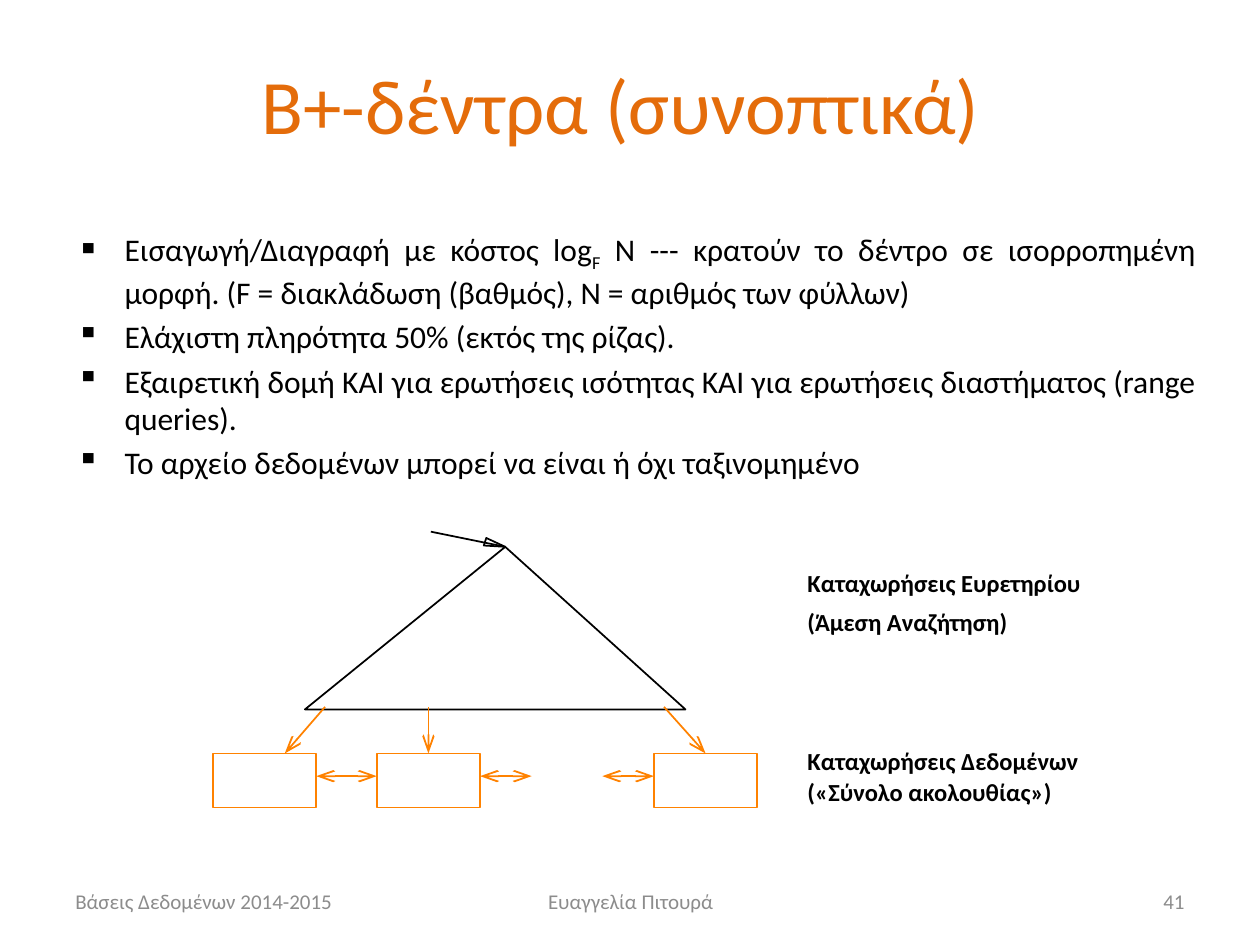
from dataclasses import dataclass

from lxml import etree
from pptx import Presentation
from pptx import util as u
from pptx.dml.color import RGBColor
from pptx.enum import shapes, text
from pptx.oxml import ns

WIDTH, HEIGHT = u.Inches(10), u.Inches(7.5)
COLUMNS, ROWS = 100, 75


@dataclass(frozen=True)
class Theme:
    font: str = "Calibri"
    ink: str = "000000"
    heading: str = "E46C0A"
    data: str = "FF8200"
    muted: str = "8C8C8C"
    title_size: int = 44
    body_size: int = 18
    label_size: int = 14
    footer_size: int = 12
    stroke: int = 1


THEME = Theme()
ALIGN = text.PP_ALIGN
ANCHOR = text.MSO_ANCHOR

BULLETS = [
    [("Εισαγωγή/Διαγραφή με κόστος log", 0), ("F", -25000),
     (" N --- κρατούν το δέντρο σε ισορροπημένη μορφή. "
      "(F = διακλάδωση (βαθμός), N = αριθμός των φύλλων)", 0)],
    [("Ελάχιστη πληρότητα 50% (εκτός της ρίζας).", 0)],
    [("Εξαιρετική δομή ΚΑΙ για ερωτήσεις ισότητας ΚΑΙ για ερωτήσεις "
      "διαστήματος (range queries).", 0)],
    [("Το αρχείο δεδομένων μπορεί να είναι ή όχι ταξινομημένο", 0)],
]
LABELS = [
    ("Καταχωρήσεις Ευρετηρίου", 44.6),
    ("(Άμεση Αναζήτηση)", 47.7),
    ("Καταχωρήσεις Δεδομένων", 58.7),
    ("(«Σύνολο ακολουθίας»)", 61.2),
]
FOOTERS = [
    ("Βάσεις Δεδομένων 2014-2015", 5, 23.3, ALIGN.LEFT),
    ("Ευαγγελία Πιτουρά", 34.2, 31.7, ALIGN.CENTER),
    ("41", 71.7, 23.3, ALIGN.RIGHT),
]


def col(count):
    return round(WIDTH * count / COLUMNS)


def row(count):
    return round(HEIGHT * count / ROWS)


def place(left, top, width, height):
    return col(left), row(top), col(width), row(height)


def apply(target, formats):
    for name, value in formats.items():
        setattr(target, name, value)


def add_frame(slide, area, **formats):
    frame = slide.shapes.add_textbox(*place(*area)).text_frame
    apply(frame, {"word_wrap": True, **formats})
    return frame


def add_run(paragraph, words, size, color, bold=False):
    run = paragraph.add_run()
    run.text = words
    apply(run.font, {"name": THEME.font, "size": u.Pt(size), "bold": bold})
    run.font.color.rgb = RGBColor.from_string(color)
    return run


def add_line_of_text(slide, words, area, size, color, align=ALIGN.LEFT,
                     bold=False, **formats):
    paragraph = add_frame(slide, area, **formats).paragraphs[0]
    paragraph.alignment = align
    add_run(paragraph, words, size, color, bold)


def add_bullets(slide, points, area):
    frame = add_frame(slide, area)
    for index, point in enumerate(points):
        paragraph = frame.add_paragraph() if index else frame.paragraphs[0]
        apply(paragraph, {"alignment": ALIGN.JUSTIFY,
                          "space_before": u.Pt(THEME.body_size * 0.2)})
        properties = paragraph._p.get_or_add_pPr()
        properties.set("marL", str(col(3.8)))
        properties.set("indent", str(-col(3.8)))
        etree.SubElement(properties, ns.qn("a:buChar")).set("char", "▪")
        for words, baseline in point:
            run = add_run(paragraph, words, THEME.body_size, THEME.ink)
            if baseline:
                run._r.get_or_add_rPr().set("baseline", str(baseline))


def outline(shape, color):
    shape.shadow.inherit = False
    shape.fill.background()
    shape.line.color.rgb = RGBColor.from_string(color)
    shape.line.width = u.Pt(THEME.stroke)


def add_triangle(slide, corners):
    points = [(col(x), row(y)) for x, y in corners]
    builder = slide.shapes.build_freeform(*points[0])
    builder.add_line_segments(points[1:], close=True)
    outline(builder.convert_to_shape(), THEME.ink)


def add_data_page(slide, area):
    page = slide.shapes.add_shape(shapes.MSO_SHAPE.RECTANGLE, *place(*area))
    outline(page, THEME.data)


def add_pointer(slide, start, end, color, ends=("tailEnd",)):
    pointer = slide.shapes.add_connector(
        shapes.MSO_CONNECTOR.STRAIGHT,
        col(start[0]), row(start[1]), col(end[0]), row(end[1]))
    pointer.line.color.rgb = RGBColor.from_string(color)
    pointer.line.width = u.Pt(THEME.stroke)
    line = pointer.line._get_or_add_ln()
    for end_name in ends:
        head = etree.SubElement(line, ns.qn(f"a:{end_name}"))
        for name, value in {"type": "arrow", "w": "med", "len": "lg"}.items():
            head.set(name, value)
    etree.SubElement(pointer._element.spPr, ns.qn("a:effectLst"))


def add_index(slide):
    root, base = (40.1, 43.4), 56.3
    add_triangle(slide, [(24.2, base), root, (54.4, base)])
    add_pointer(slide, (34.2, 42.2), root, THEME.ink, ends=())
    add_triangle(slide, [(38.6, 42.7), root, (38.4, 43.3)])


def add_data_level(slide):
    top, width, height = 59.8, 8.2, 4.3
    first, second, last = 16.9, 29.9, 51.9
    gap = 4.1
    for left in (first, second, last):
        add_data_page(slide, (left, top, width, height))
    for start, end in ((25.8, 22.6), (34, 34), (52.7, 56)):
        add_pointer(slide, (start, 56.1), (end, top), THEME.data)
    chain = ((first + width, second),
             (second + width, second + width + gap),
             (last - gap, last))
    for start, end in chain:
        add_pointer(slide, (start, 61.6), (end, 61.6), THEME.data,
                    ends=("headEnd", "tailEnd"))


def main():
    deck = Presentation()
    apply(deck, {"slide_width": WIDTH, "slide_height": HEIGHT})
    slide = deck.slides.add_slide(deck.slide_layouts[6])
    add_line_of_text(slide, "Β+-δέντρα (συνοπτικά)", (4.3, 2, 90, 12.5),
                     THEME.title_size, THEME.heading, ALIGN.CENTER,
                     vertical_anchor=ANCHOR.MIDDLE)
    add_bullets(slide, BULLETS, (5.1, 17.8, 90.8, 21.7))
    add_index(slide)
    add_data_level(slide)
    for words, top in LABELS:
        add_line_of_text(slide, words, (63.1, top, 26.8, 3.3),
                         THEME.label_size, THEME.ink, bold=True,
                         word_wrap=False)
    for words, left, width, align in FOOTERS:
        add_line_of_text(slide, words, (left, 69.5, width, 4),
                         THEME.footer_size, THEME.muted, align,
                         vertical_anchor=ANCHOR.MIDDLE)
    deck.save("out.pptx")


if __name__ == "__main__":
    main()
